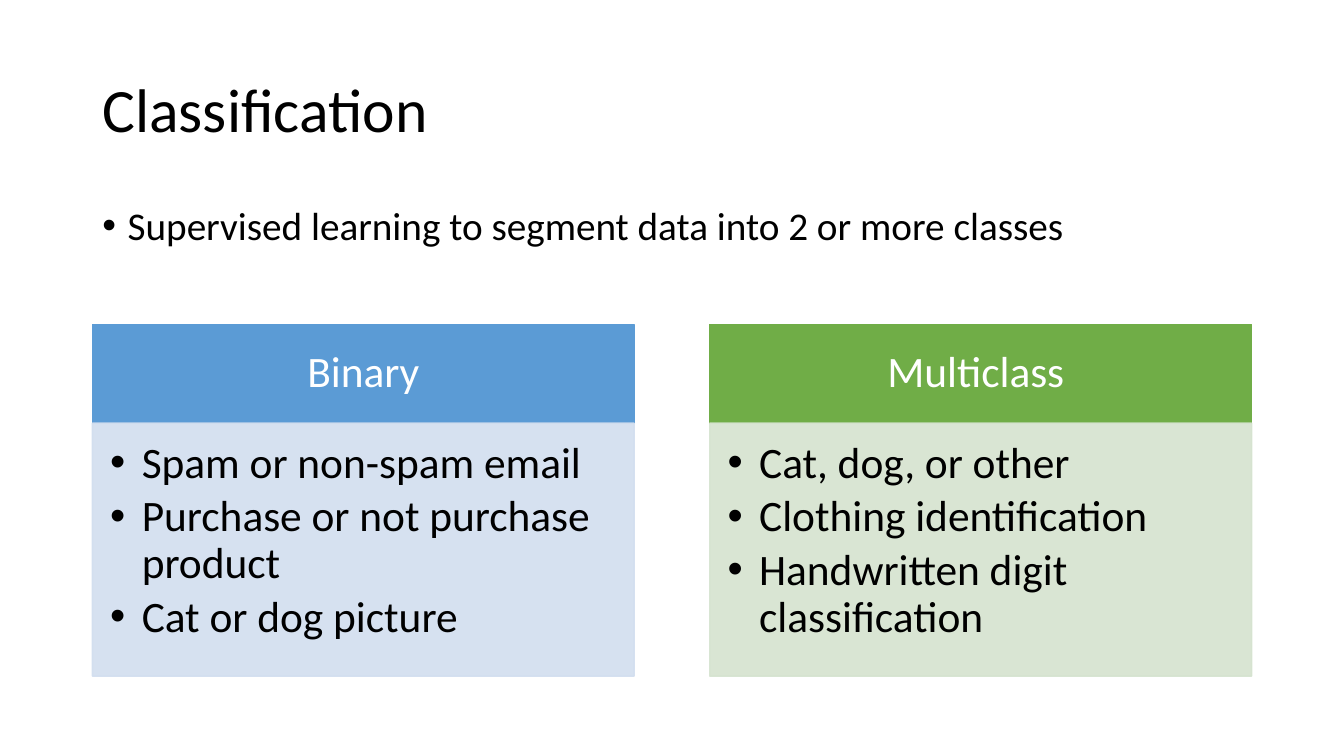
import pptx
import pptx.dml.color
import pptx.enum.shapes
import pptx.enum.text
import pptx.oxml
import pptx.oxml.ns
import pptx.util

PX = 9525
FONT = "Calibri"
ALIGN = pptx.enum.text.PP_ALIGN
ANCHOR = pptx.enum.text.MSO_ANCHOR
HEADER_HEIGHT = 94
CARD_WIDTH, CARD_HEIGHT = 516, 335
CARD_LEFT, CARD_TOP, CARD_STEP = 88, 309, 588

CARDS = [
    ("Binary", "5B9BD5", "D2DEEF",
     ["Spam or non-spam email", "Purchase or not purchase product", "Cat or dog picture"]),
    ("Multiclass ", "70AD47", "D5E3CF",
     ["Cat, dog, or other", "Clothing identification", "Handwritten digit classification"]),
]


def px(length):
    return pptx.util.Emu(length * PX)


def paint(color_format, color):
    color_format.rgb = pptx.dml.color.RGBColor.from_string(color)


def place(shape, box):
    shape.left, shape.top, shape.width, shape.height = map(px, box)


def format_para(para, size, color, align=ALIGN.LEFT, before=0, after=0):
    para.alignment = align
    para.line_spacing = 0.9
    para.space_before = pptx.util.Pt(before)
    para.space_after = pptx.util.Pt(after)
    para.font.name = FONT
    para.font.size = pptx.util.Pt(size)
    paint(para.font.color, color)


def add_bullet(para, indent):
    properties = para._p.get_or_add_pPr()
    properties.set("marL", str(px(indent)))
    properties.set("indent", str(-px(indent)))
    namespace = pptx.oxml.ns.nsdecls("a")
    defaults = properties.find(pptx.oxml.ns.qn("a:defRPr"))
    for markup in (f'<a:buFont {namespace} typeface="Arial"/>', f'<a:buChar {namespace} char="•"/>'):
        defaults.addprevious(pptx.oxml.parse_xml(markup))


def set_opacity(solid_fill, percent):
    namespace = pptx.oxml.ns.nsdecls("a")
    solid_fill[0].append(pptx.oxml.parse_xml(f'<a:alpha {namespace} val="{percent * 1000}"/>'))


def add_panel(page, box, color, insets, anchor, opacity=100):
    panel = page.shapes.add_shape(pptx.enum.shapes.MSO_SHAPE.RECTANGLE, *map(px, box))
    panel.shadow.inherit = False
    panel.fill.solid()
    paint(panel.fill.fore_color, color)
    panel.line.width = pptx.util.Pt(1)
    paint(panel.line.color, color)
    if opacity < 100:
        for solid_fill in panel._element.spPr.iter(pptx.oxml.ns.qn("a:solidFill")):
            set_opacity(solid_fill, opacity)
    frame = panel.text_frame
    frame.word_wrap = True
    frame.vertical_anchor = anchor
    frame.margin_left, frame.margin_top, frame.margin_right, frame.margin_bottom = map(px, insets)
    return frame


def add_card(page, box, heading, header_color, body_color, items):
    left, top, width, height = box
    header = add_panel(page, (left, top, width, HEADER_HEIGHT), header_color,
                       (23, 13, 23, 13), ANCHOR.MIDDLE)
    header.text = heading
    format_para(header.paragraphs[0], 31, "FFFFFF", ALIGN.CENTER)
    body = add_panel(page, (left, top + HEADER_HEIGHT, width, height - HEADER_HEIGHT), body_color,
                     (17, 17, 23, 26), ANCHOR.TOP, 90)
    body.text = "\n".join(items)
    for para in body.paragraphs:
        format_para(para, 31, "000000", after=4.65)
        add_bullet(para, 30)


def fill_title(page, box, text):
    title = page.shapes.title
    place(title, box)
    frame = title.text_frame
    frame.text = text
    frame.auto_size = pptx.enum.text.MSO_AUTO_SIZE.NONE
    frame.vertical_anchor = ANCHOR.MIDDLE
    format_para(frame.paragraphs[0], 44, "000000")


def fill_summary(page, box, text):
    summary = page.placeholders[1]
    place(summary, box)
    frame = summary.text_frame
    frame.text = text
    frame.auto_size = pptx.enum.text.MSO_AUTO_SIZE.NONE
    format_para(frame.paragraphs[0], 28, "000000", before=10)
    add_bullet(frame.paragraphs[0], 24)


def main():
    deck = pptx.Presentation()
    deck.slide_width, deck.slide_height = px(1280), px(720)
    page = deck.slides.add_slide(deck.slide_layouts[1])
    fill_title(page, (88, 38, 1104, 139), "Classification")
    fill_summary(page, (88, 192, 1104, 85),
                 "Supervised learning to segment data into 2 or more classes")
    for index, card in enumerate(CARDS):
        box = (CARD_LEFT + index * CARD_STEP, CARD_TOP, CARD_WIDTH, CARD_HEIGHT)
        add_card(page, box, *card)
    deck.save("out.pptx")


if __name__ == "__main__":
    main()
